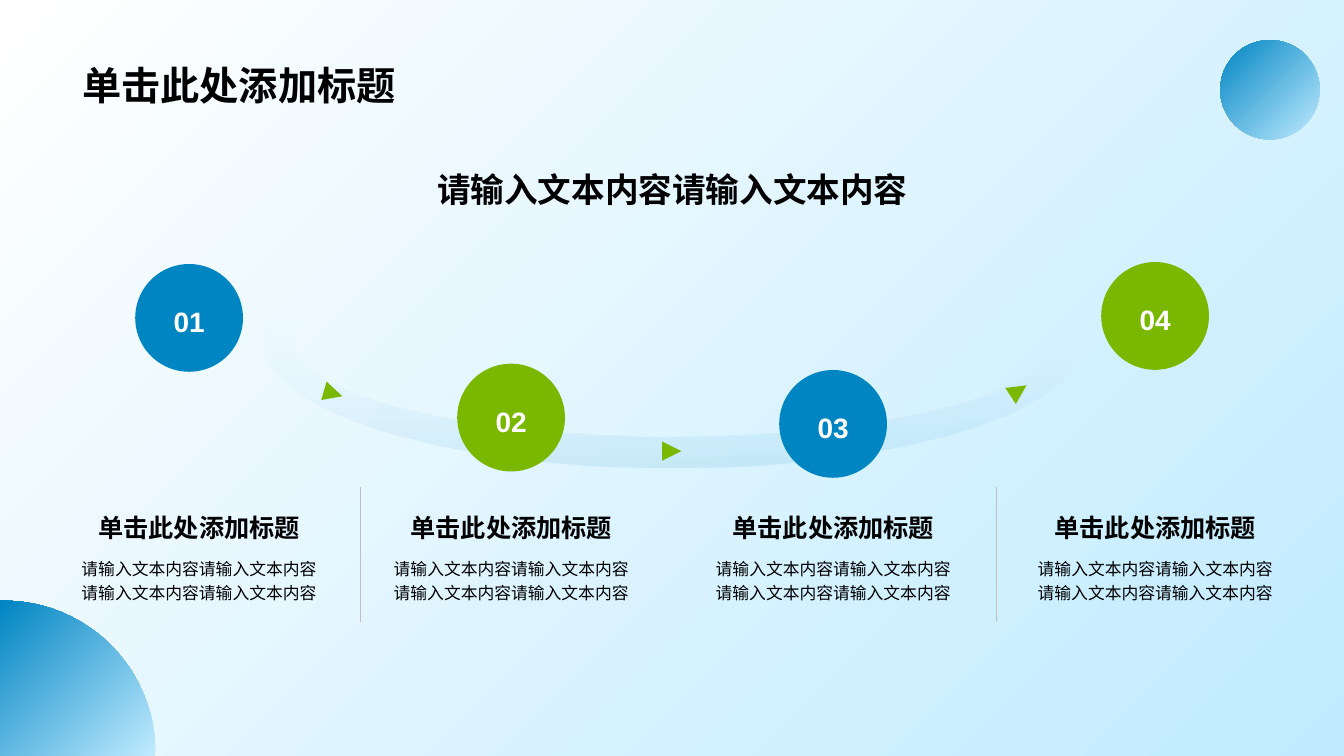
import math
import pptx
import pptx.util
import pptx.dml.color
import pptx.enum.shapes
import pptx.enum.text
import pptx.oxml
import pptx.oxml.ns

Pt = pptx.util.Pt
SHAPE = pptx.enum.shapes.MSO_SHAPE
ALIGN = pptx.enum.text.PP_ALIGN
ANCHOR = pptx.enum.text.MSO_ANCHOR
COLORS = {"sky": "C0EBFF", "blue": "0085C3", "green": "7AB800",
          "white": "FFFFFF", "black": "000000", "grey": "BFBFBF"}
FONT = "Arial"

TITLE = "单击此处添加标题"
HEADLINE = "请输入文本内容请输入文本内容"
STEPS = [
    {"number": "01", "color": "blue", "top": 188.6, "left": 43.2, "width": 198,
     "title": TITLE, "body": [HEADLINE, HEADLINE]},
    {"number": "02", "color": "green", "top": 259.8, "left": 273.4, "width": 183.6,
     "title": TITLE, "body": [HEADLINE * 2]},
    {"number": "03", "color": "blue", "top": 264.3, "left": 503.4, "width": 183.6,
     "title": TITLE, "body": [HEADLINE * 2]},
    {"number": "04", "color": "green", "top": 187.2, "left": 733.4, "width": 183.6,
     "title": TITLE, "body": [HEADLINE * 2]},
]
ARROWS = [(231.1, 274.3, 106.5), (473, 315.4, 90), (720.7, 272.2, 56.5)]
DIVIDERS = [257, 711.4]
CIRCLE_LEFT, CIRCLE_STEP, CIRCLE_SIZE = 96.6, 230, 77
ARROW_SIZE = 13.7
CORNER_X, CORNER_Y, CORNER_RADIUS = 2.6, 537.5, 108.4


def rgb(name):
    """Return the named colour."""
    return pptx.dml.color.RGBColor.from_string(COLORS[name])


def set_gradient(fill, first, last, angle=135, start=0):
    """Fill with two colours along a counter-clockwise angle."""
    fill.gradient()
    fill.gradient_angle = angle
    for stop, name, position in zip(fill.gradient_stops, (first, last), (start, 1)):
        stop.color.rgb = rgb(name)
        stop.position = position


def add_shape(s, kind, left, top, width, height, color=None):
    """Add a plain preset shape."""
    sp = s.shapes.add_shape(kind, Pt(left), Pt(top), Pt(width), Pt(height))
    sp.shadow.inherit = False
    sp.line.fill.background()
    if color:
        sp.fill.solid()
        sp.fill.fore_color.rgb = rgb(color)
    return sp


def add_box(s, left, top, width, height):
    """Add an empty text box."""
    return s.shapes.add_textbox(Pt(left), Pt(top), Pt(width), Pt(height))


def write(sp, *lines, size, color="black", bold=False, align=ALIGN.CENTER,
          anchor=ANCHOR.BOTTOM, spacing=None, wrap=True):
    """Write formatted paragraphs into a shape."""
    tf = sp.text_frame
    tf.word_wrap = wrap
    tf.vertical_anchor = anchor
    for i, line in enumerate(lines):
        p = tf.add_paragraph() if i else tf.paragraphs[0]
        p.alignment = align
        p.line_spacing = spacing
        r = p.add_run()
        r.text = line
        r.font.name = FONT
        r.font.size = Pt(size)
        r.font.bold = bold
        r.font.color.rgb = rgb(color)


def add_corner(s):
    """Draw the quarter disc in the bottom left corner."""
    arc = [(CORNER_X + CORNER_RADIUS * math.sin(math.radians(a)),
            CORNER_Y - CORNER_RADIUS * math.cos(math.radians(a))) for a in range(91)]
    points = arc + [(arc[-1][0], 540), (0, 540), (0, arc[0][1])]
    points = [(Pt(x), Pt(y)) for x, y in points]
    builder = s.shapes.build_freeform(*points[0])
    builder.add_line_segments(points[1:], close=True)
    sp = builder.convert_to_shape()
    sp.shadow.inherit = False
    sp.line.fill.background()
    set_gradient(sp.fill, "sky", "blue")


def add_ring(s):
    """Draw the fading ring that joins the steps."""
    sp = add_shape(s, SHAPE.DONUT, 187.9, 154.1, 584.6, 180)
    sp.adjustments[0] = 0.126
    set_gradient(sp.fill, "white", "blue", angle=270, start=0.35)
    qn = pptx.oxml.ns.qn
    for clr, alpha in zip(sp.element.spPr.iter(qn("a:srgbClr")), (0, 10000)):
        clr.append(pptx.oxml.parse_xml(
            f'<a:alpha {pptx.oxml.ns.nsdecls("a")} val="{alpha}"/>'))


def add_divider(s, x):
    """Draw one thin vertical line."""
    line = s.shapes.add_connector(pptx.enum.shapes.MSO_CONNECTOR.STRAIGHT,
                                  Pt(x), Pt(347.8), Pt(x), Pt(444.2))
    line.line.color.rgb = rgb("grey")
    line.line.width = Pt(0.25)
    line.element.spPr.append(pptx.oxml.parse_xml(
        f'<a:effectLst {pptx.oxml.ns.nsdecls("a")}/>'))


def add_step(s, index, step):
    """Draw a numbered circle with its title and body."""
    circle = add_shape(s, SHAPE.OVAL, CIRCLE_LEFT + index * CIRCLE_STEP, step["top"],
                       CIRCLE_SIZE, CIRCLE_SIZE, step["color"])
    write(circle, step["number"], size=20, color="white", bold=True,
          anchor=ANCHOR.MIDDLE, spacing=1.2, wrap=False)
    left, width = step["left"], step["width"]
    write(add_box(s, left, 347.8, width, 43.2), step["title"], size=18, bold=True)
    write(add_box(s, left, 392.4, width, 77), *step["body"], size=12,
          anchor=ANCHOR.TOP, spacing=1.2)


def main():
    """Build the slide and save it."""
    prs = pptx.Presentation()
    prs.slide_width, prs.slide_height = Pt(960), Pt(540)
    s = prs.slides.add_slide(prs.slide_layouts[6])
    set_gradient(s.background.fill, "sky", "white")
    add_corner(s)
    ball = add_shape(s, SHAPE.OVAL, 871.6, 28.6, 71, 71)
    set_gradient(ball.fill, "sky", "blue")
    add_ring(s)
    for left, top, angle in ARROWS:
        arrow = add_shape(s, SHAPE.FLOWCHART_EXTRACT, left, top,
                          ARROW_SIZE, ARROW_SIZE, "green")
        arrow.rotation = angle
    for x in DIVIDERS:
        add_divider(s, x)
    write(add_box(s, 125.3, 103.7, 709.9, 49), HEADLINE, size=24, bold=True)
    for index, step in enumerate(STEPS):
        add_step(s, index, step)
    write(add_box(s, 51.8, 10.1, 855.4, 70.6), TITLE, size=28, bold=True,
          align=ALIGN.LEFT)
    prs.save("out.pptx")


if __name__ == "__main__":
    main()
